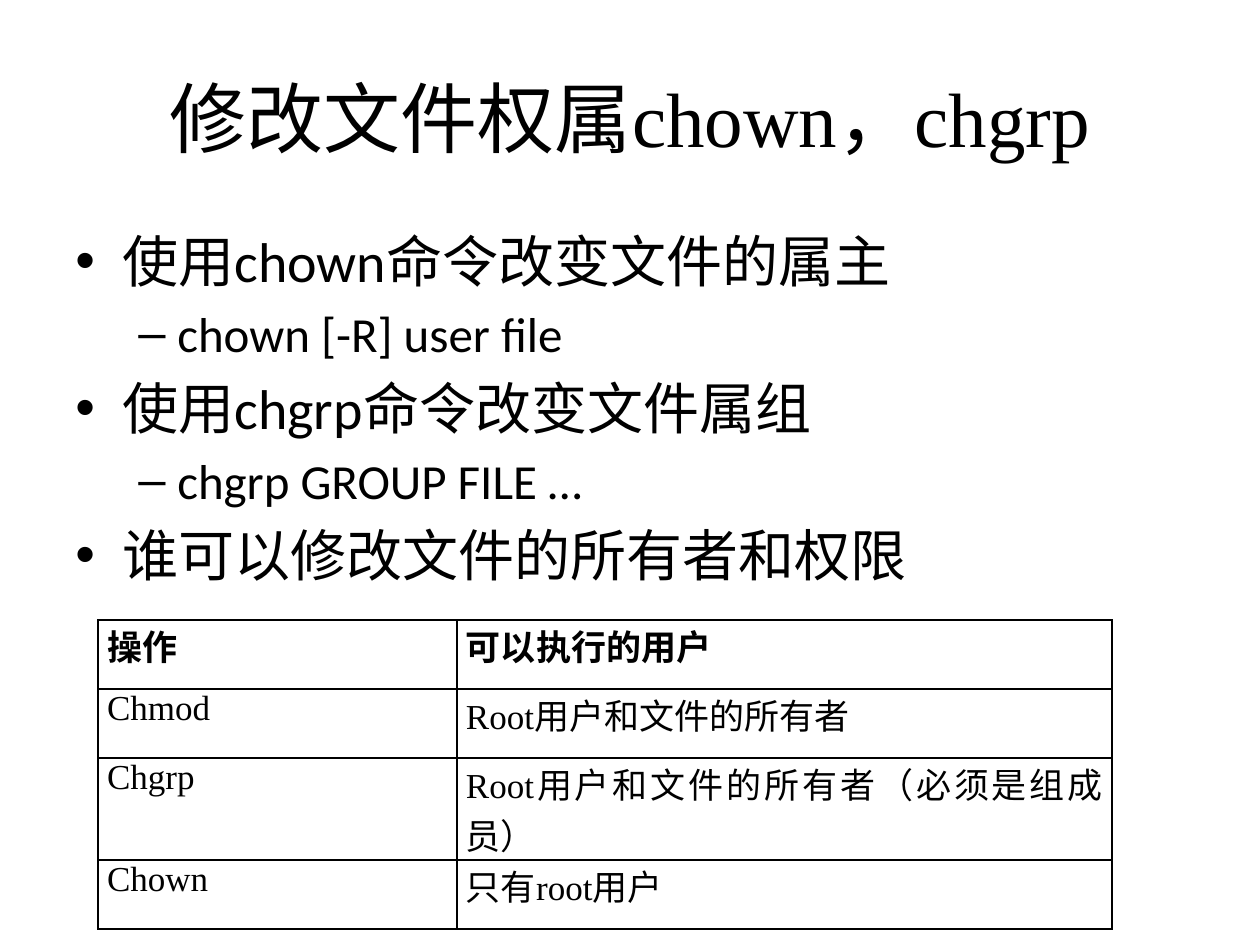
from lxml.etree import SubElement
from pptx import Presentation
from pptx.dml.color import RGBColor
from pptx.enum.text import MSO_ANCHOR as Anchor, PP_ALIGN as Align
from pptx.oxml.ns import qn
from pptx.util import Pt

PX = 914400 / 126  # EMU in one px
COLORS = {"text": "000000", "border": "000000"}
SERIF, SANS = "Times New Roman", "Calibri"

# Per outline level: bullet sign, text size, left margin and hanging indent in px
LEVELS = [
    {"sign": "•", "size": 32, "margin": 47, "hang": 47},
    {"sign": "–", "size": 28, "margin": 102, "hang": 39},
]
OUTLINE = [
    (0, "使用chown命令改变文件的属主"),
    (1, "chown [-R] user file"),
    (0, "使用chgrp命令改变文件属组"),
    (1, "chgrp GROUP FILE …"),
    (0, "谁可以修改文件的所有者和权限"),
]
PERMISSIONS = [
    ("操作", "可以执行的用户"),
    ("Chmod", "Root用户和文件的所有者"),
    ("Chgrp", "Root用户和文件的所有者（必须是组成员）"),
    ("Chown", "只有root用户"),
]
COLUMN_WIDTHS = [359, 655]
ROW_HEIGHTS = [69, 69, 102, 69]  # the third row holds two lines


def px(length):
    return round(length * PX)


def set_attributes(target, values):
    for name, value in values.items():
        setattr(target, name, value)


def write(para, text, size, font, bold=False):
    span = para.add_run()
    span.text = text
    set_attributes(span.font, {"size": Pt(size), "name": font, "bold": bold})
    span.font.color.rgb = RGBColor.from_string(COLORS["text"])


def add_title(page, text):
    title = page.shapes.title
    set_attributes(title, {"left": px(63), "top": px(38),
                           "width": px(1134), "height": px(158)})
    title.text_frame.vertical_anchor = Anchor.MIDDLE
    para = title.text_frame.paragraphs[0]
    para.alignment = Align.CENTER
    write(para, text, 44, SERIF)


def add_bullet(para, level):
    style = LEVELS[level]
    para.level = level
    properties = para._p.get_or_add_pPr()
    properties.set("marL", str(px(style["margin"])))
    properties.set("indent", str(-px(style["hang"])))
    SubElement(properties, qn("a:buFont"), typeface="Arial")
    SubElement(properties, qn("a:buChar"), char=style["sign"])


def add_outline(page, items):
    box = page.shapes.add_textbox(px(63), px(220), px(1134), px(624))
    frame = box.text_frame
    frame.word_wrap = True
    for index, (level, text) in enumerate(items):
        para = frame.add_paragraph() if index else frame.paragraphs[0]
        size = LEVELS[level]["size"]
        add_bullet(para, level)
        if index:
            para.space_before = Pt(size * 0.2)
        write(para, text, size, SANS)


def add_borders(cell):
    properties = cell._tc.get_or_add_tcPr()
    for side in ("lnL", "lnR", "lnT", "lnB"):
        line = SubElement(properties, qn(f"a:{side}"), w=str(Pt(1)))
        fill = SubElement(line, qn("a:solidFill"))
        SubElement(fill, qn("a:srgbClr"), val=COLORS["border"])


def add_permission_table(page, rows):
    table = page.shapes.add_table(
        len(rows), len(COLUMN_WIDTHS), px(98), px(620),
        px(sum(COLUMN_WIDTHS)), px(sum(ROW_HEIGHTS))).table
    set_attributes(table, {"first_row": False, "horz_banding": False})
    for column, width in zip(table.columns, COLUMN_WIDTHS):
        column.width = px(width)
    for row, height in zip(table.rows, ROW_HEIGHTS):
        row.height = px(height)
    for row_index, texts in enumerate(rows):
        for column_index, text in enumerate(texts):
            cell = table.cell(row_index, column_index)
            set_attributes(cell, {"margin_left": px(9), "margin_right": px(9),
                                  "margin_top": 0, "margin_bottom": 0})
            add_borders(cell)
            cell.fill.background()
            para = cell.text_frame.paragraphs[0]
            para.alignment = Align.JUSTIFY
            write(para, text, 20, SERIF, bold=row_index == 0)


def main():
    deck = Presentation()
    set_attributes(deck, {"slide_width": px(1260), "slide_height": px(945)})
    page = deck.slides.add_slide(deck.slide_layouts[5])  # title only

    # Heading
    add_title(page, "修改文件权属chown，chgrp")
    # Commands
    add_outline(page, OUTLINE)
    # Who may run each command
    add_permission_table(page, PERMISSIONS)

    deck.save("out.pptx")


if __name__ == "__main__":
    main()
